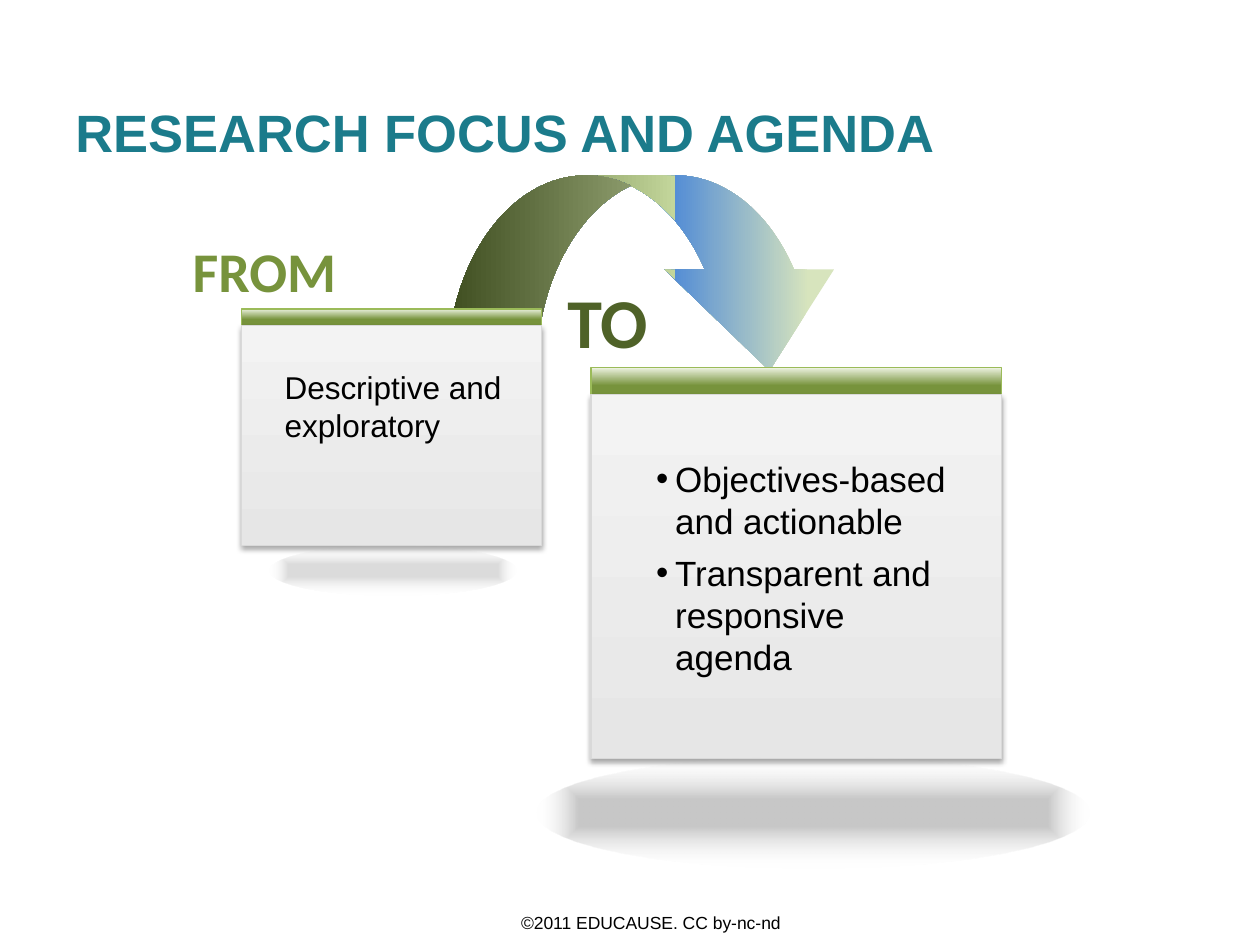
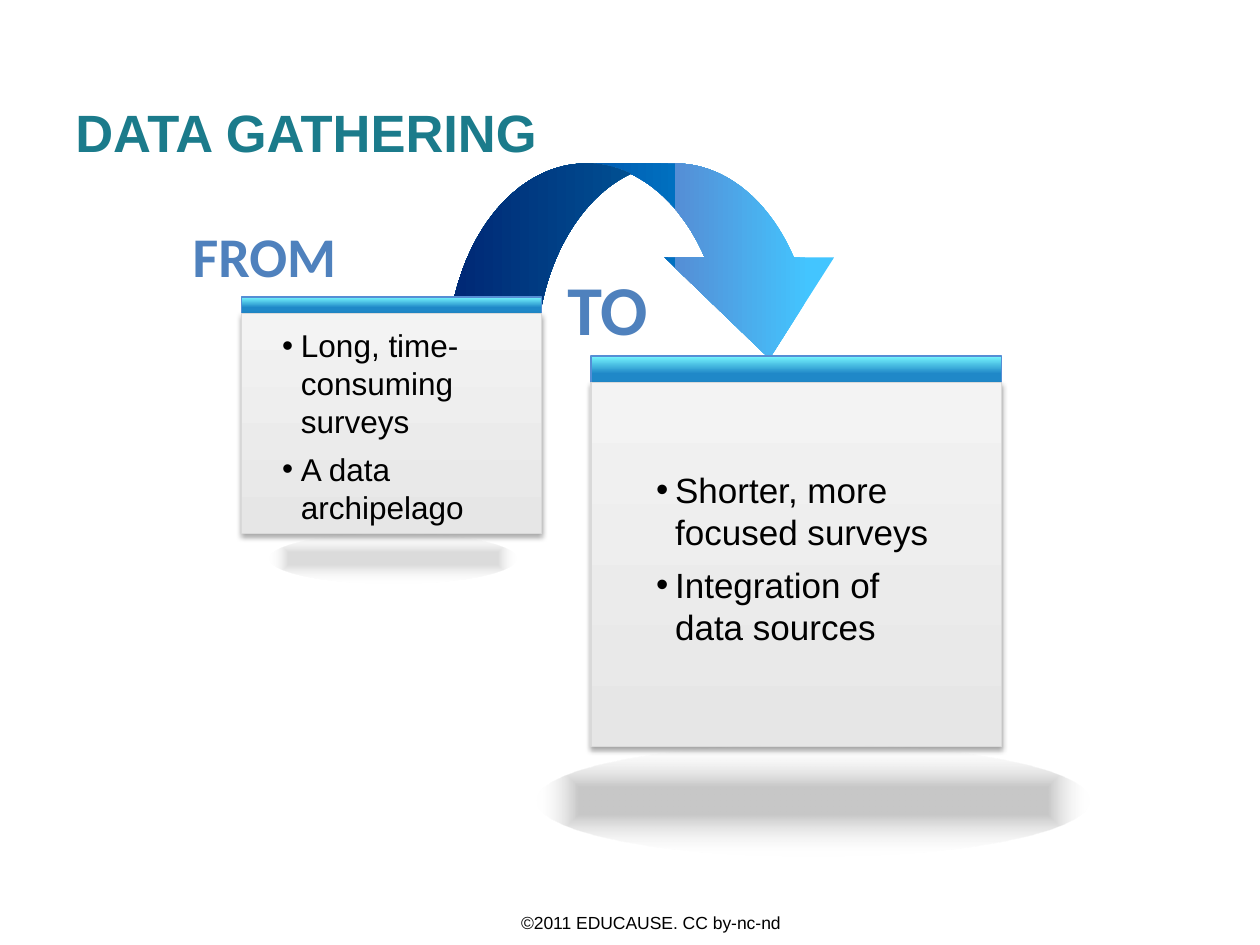
from dataclasses import dataclass

from pptx import Presentation
from pptx.dml.color import RGBColor
from pptx.enum.shapes import MSO_SHAPE as Preset
from pptx.enum.text import MSO_ANCHOR as Anchor, MSO_AUTO_SIZE as AutoSize, PP_ALIGN as Align
from pptx.oxml import parse_xml
from pptx.oxml.ns import nsdecls, qn
from pptx.util import Pt


@dataclass(frozen=True)
class Theme:
    body_font: str = "Arial"
    label_font: str = "Calibri"
    title: str = "1B7B8B"
    text: str = "000000"
    panel_line: str = "D9D9D9"
    panel_stops: tuple = ((0, "E6E6E6"), (100, "F3F3F3"))
    title_size: int = 30
    from_label_size: int = 32
    to_label_size: int = 40
    from_body_size: int = 18
    to_body_size: int = 20
    footer_size: int = 10


@dataclass(frozen=True)
class Palette:
    from_label: str
    to_label: str
    band_line: str
    band_stops: tuple
    arrow_stops: tuple


@dataclass(frozen=True)
class Change:
    """One slide's contents; lift raises the whole diagram."""
    title: str
    palette: Palette
    lift: float
    from_label_top: float
    to_label_top: float
    from_box: tuple
    from_items: tuple
    from_bulleted: bool
    to_box: tuple
    to_items: tuple


THEME = Theme()
FOOTER = "©2011 EDUCAUSE. CC by-nc-nd"

GREEN = Palette(
    "77933C", "4F6228", "9BBB59",
    ((44, "77933C"), (100, "EBF1DE")),
    ((11, "D7E4BD"), (44, "558ED5"), (44, "C3D69B"), (100, "4F6228")),
)
BLUE = Palette(
    "4F81BD", "4F81BD", "558ED5",
    ((44, "1F88C8"), (100, "78F8FF")),
    ((11, "43C5FF"), (44, "558ED5"), (44, "0070C0"), (100, "003192")),
)

CHANGES = (
    Change(
        "RESEARCH FOCUS AND AGENDA", GREEN, 0, 131.8, 155.5,
        (155.5, 206.6, 140.4, 51.1), ("Descriptive and exploratory",), False,
        (367.9, 257.8, 184.3, 134.6),
        ("Objectives-based and actionable", "Transparent and responsive agenda"),
    ),
    Change(
        "DATA GATHERING", BLUE, 6.8, 123.1, 148.3,
        (154.1, 182.9, 152.6, 122.4), ("Long, time-consuming surveys", "A data archipelago"), True,
        (367.9, 264.2, 184.3, 110.2),
        ("Shorter, more focused surveys", "Integration of data sources"),
    ),
)


def points(box):
    return [Pt(length) for length in box]


def add_bullet(paragraph):
    properties = paragraph._p.get_or_add_pPr()
    properties.set("marL", str(Pt(10.8)))
    properties.set("indent", str(-Pt(10.8)))
    properties.append(parse_xml(f'<a:buFont {nsdecls("a")} typeface="{THEME.body_font}"/>'))
    properties.append(parse_xml(f'<a:buChar {nsdecls("a")} char="•"/>'))
    paragraph.space_after = Pt(6)


def add_text(slide, box, lines, size, color, font=THEME.body_font, bold=False,
             align=Align.LEFT, anchor=Anchor.TOP, wrap=True, grow=False, bulleted=False):
    frame = slide.shapes.add_textbox(*points(box)).text_frame
    frame.word_wrap = wrap
    frame.auto_size = AutoSize.SHAPE_TO_FIT_TEXT if grow else AutoSize.NONE
    frame.vertical_anchor = anchor
    for index, line in enumerate(lines):
        paragraph = frame.add_paragraph() if index else frame.paragraphs[0]
        paragraph.alignment = align
        if bulleted:
            add_bullet(paragraph)
        run = paragraph.add_run()
        run.text = line
        run.font.name = font
        run.font.size = Pt(size)
        run.font.bold = bold
        run.font.color.rgb = RGBColor.from_string(color)


def add_label(slide, box, word, size, color):
    add_text(slide, box, [word], size, color, THEME.label_font, bold=True,
             align=Align.CENTER, wrap=False, grow=True)


def set_gradient(shape, stops, direction):
    """Fill with (position, colour[, opacity]) stops, all in percent."""
    stop_xml = "".join(
        f'<a:gs pos="{position * 1000}"><a:srgbClr val="{color}">'
        + "".join(f'<a:alpha val="{percent * 1000}"/>' for percent in opacity)
        + "</a:srgbClr></a:gs>"
        for position, color, *opacity in stops
    )
    shape.fill.background()
    blank_fill = shape._element.spPr.find(qn("a:noFill"))
    blank_fill.getparent().replace(blank_fill, parse_xml(
        f'<a:gradFill {nsdecls("a")} rotWithShape="1"><a:gsLst>{stop_xml}</a:gsLst>'
        f"{direction}</a:gradFill>"))


def linear(angle):
    return f'<a:lin ang="{angle * 60000}" scaled="0"/>'


def add_gradient_shape(shapes, preset, box, stops, direction, line=None):
    shape = shapes.add_shape(preset, *points(box))
    shape.shadow.inherit = False
    set_gradient(shape, stops, direction)
    if line:
        shape.line.color.rgb = RGBColor.from_string(line)
        shape.line.width = Pt(0.75)
    else:
        shape.line.fill.background()
    return shape


def add_drop_shadow(shape):
    shape._element.spPr.find(qn("a:effectLst")).append(parse_xml(
        f'<a:outerShdw {nsdecls("a")} blurRad="{Pt(3.1)}" dist="{Pt(1.8)}" dir="5400000" '
        'algn="t" rotWithShape="0"><a:srgbClr val="000000"><a:alpha val="35000"/>'
        "</a:srgbClr></a:outerShdw>"))


def add_card(slide, left, top, width, band_height, panel_offset, panel_height, palette):
    shapes = slide.shapes.add_group_shape().shapes
    add_gradient_shape(shapes, Preset.RECTANGLE, (left, top, width, band_height),
                       palette.band_stops, linear(270), palette.band_line)
    panel = add_gradient_shape(shapes, Preset.RECTANGLE,
                               (left, top + panel_offset, width, panel_height),
                               THEME.panel_stops, linear(270), THEME.panel_line)
    add_drop_shadow(panel)


def add_floor_shadow(slide, box, opacity):
    center = '<a:path path="shape"><a:fillToRect l="50000" t="50000" r="50000" b="50000"/></a:path>'
    add_gradient_shape(slide.shapes, Preset.OVAL, box,
                       ((24, "000000", opacity), (100, "FFFFFF", 0)), center)


def add_curved_arrow(slide, top, palette):
    arrow = add_gradient_shape(slide.shapes, Preset.CURVED_DOWN_ARROW, (255.6, top, 232.6, 111.6),
                               palette.arrow_stops, linear(180))
    for index, value in enumerate((0.457, 0.869, 0.519)):
        arrow.adjustments[index] = value


def add_change_slide(presentation, change):
    slide = presentation.slides.add_slide(presentation.slide_layouts[6])
    palette, lift = change.palette, change.lift
    add_text(slide, (257.8, 512.6, 228.2, 28.8), [FOOTER], THEME.footer_size, THEME.text,
             align=Align.CENTER, anchor=Anchor.MIDDLE)
    add_text(slide, (36, 30.2, 660.2, 90), [change.title], THEME.title_size, THEME.title,
             bold=True, anchor=Anchor.MIDDLE)
    add_label(slide, (316.1, change.to_label_top, 61.9, 55.4), "TO",
              THEME.to_label_size, palette.to_label)
    add_label(slide, (102.2, change.from_label_top, 97.9, 46.1), "FROM",
              THEME.from_label_size, palette.from_label)
    add_curved_arrow(slide, 100.2 - lift, palette)
    add_card(slide, 138.2, 176.5 - lift, 171.4, 10.8, 9.3, 126, palette)
    add_card(slide, 337.7, 210.2 - lift, 234.7, 18, 15.2, 208.1, palette)
    add_text(slide, change.to_box, change.to_items, THEME.to_body_size, THEME.text,
             grow=True, bulleted=True)
    add_text(slide, change.from_box, change.from_items, THEME.from_body_size, THEME.text,
             grow=True, bulleted=change.from_bulleted)
    add_floor_shadow(slide, (306.7, 432.2 - lift, 316.1, 64.1), 22)
    add_floor_shadow(slide, (154.1, 311.6 - lift, 141.1, 28.8), 14)


def main():
    presentation = Presentation()
    presentation.slide_width, presentation.slide_height = Pt(720), Pt(540)
    for change in CHANGES:
        add_change_slide(presentation, change)
    presentation.save("out.pptx")


if __name__ == "__main__":
    main()
